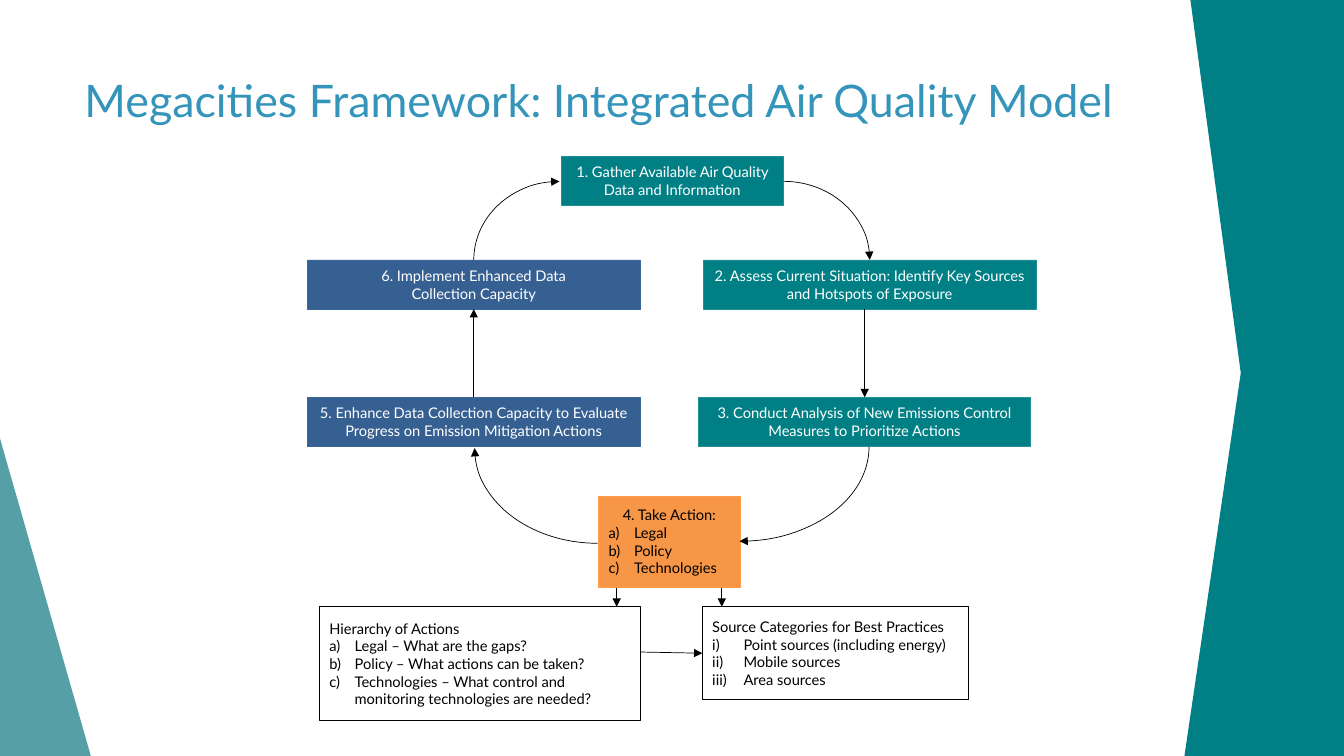
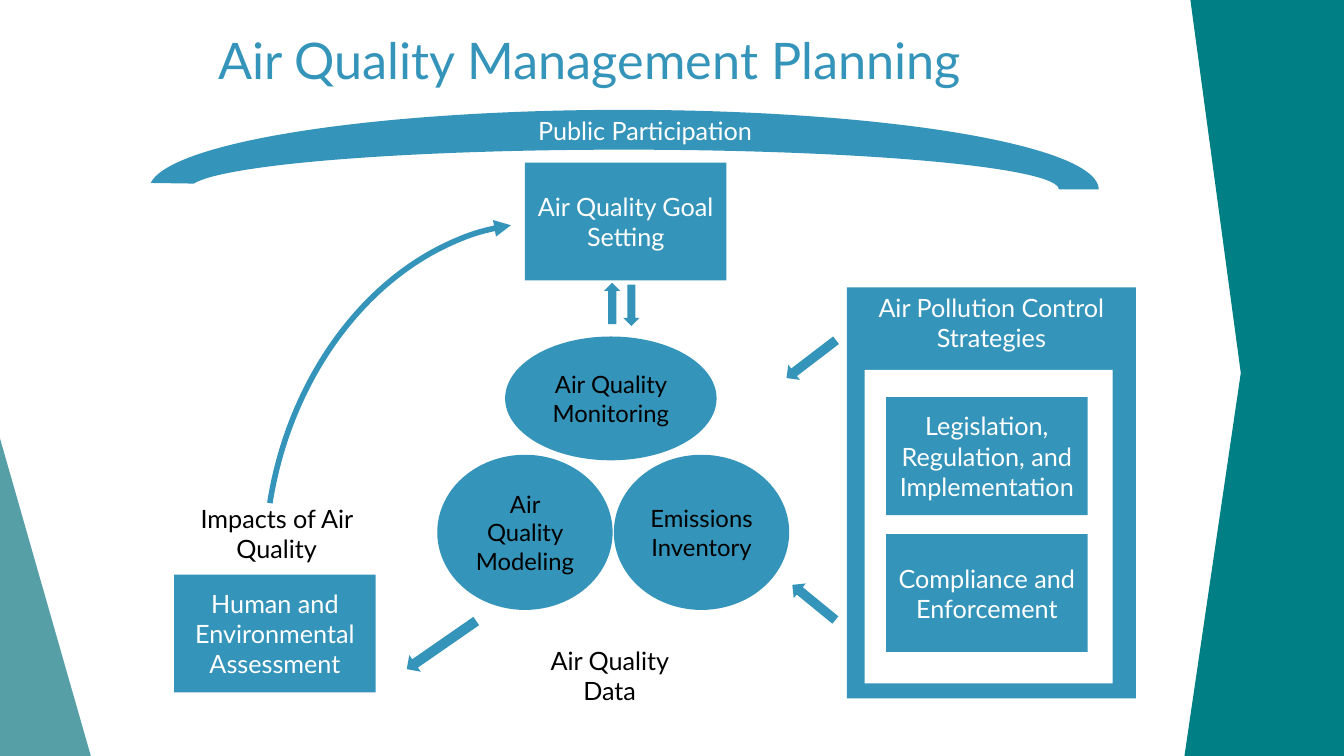
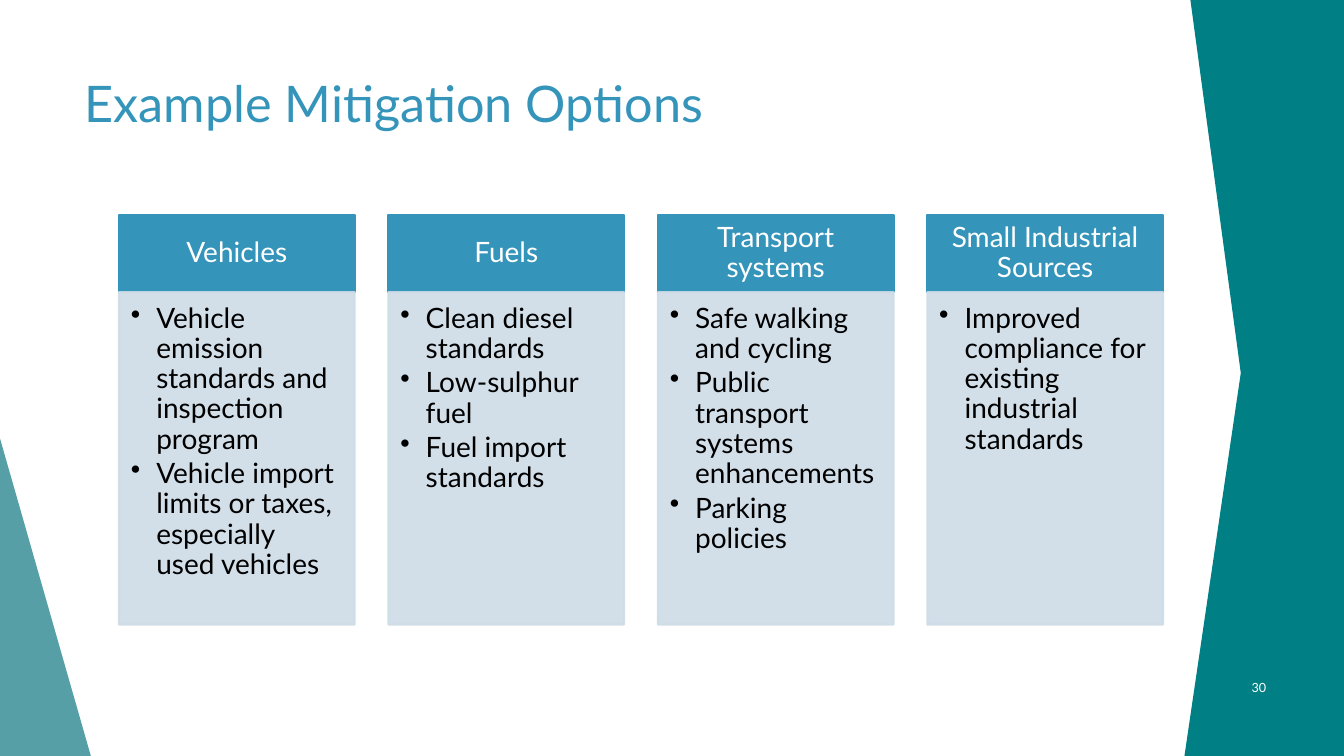
from lxml.etree import SubElement
from pptx import Presentation
from pptx.dml.color import RGBColor
from pptx.enum.shapes import MSO_CONNECTOR, MSO_SHAPE
from pptx.enum.text import MSO_ANCHOR, PP_ALIGN
from pptx.oxml.ns import qn
from pptx.util import Cm, Pt

BLUE = RGBColor(0x34, 0x94, 0xBA)
TEAL = RGBColor(0x00, 0x80, 0x85)
TEAL_EDGE = RGBColor(0x20, 0x90, 0x94)
SOFT_TEAL = RGBColor(0x3A, 0x8F, 0x98)
NAVY = RGBColor(0x37, 0x60, 0x92)
NAVY_EDGE = RGBColor(0x3B, 0x67, 0x9D)
ORANGE = RGBColor(0xF7, 0x96, 0x46)
ORANGE_EDGE = RGBColor(0xFF, 0x9D, 0x49)
PALE = RGBColor(0xCE, 0xDC, 0xE7)
WHITE = RGBColor(0xFF, 0xFF, 0xFF)
BLACK = RGBColor(0x00, 0x00, 0x00)

# Format values of text frames and paragraphs
MIDDLE = {"word_wrap": True, "vertical_anchor": MSO_ANCHOR.MIDDLE}
TOP = {"word_wrap": True, "vertical_anchor": MSO_ANCHOR.TOP}
UNWRAPPED = {"word_wrap": False, "vertical_anchor": MSO_ANCHOR.TOP}
CARD_HEAD = MIDDLE | {"margin_left": Cm(0.41), "margin_right": Cm(0.41),
                      "margin_top": Cm(0.23), "margin_bottom": Cm(0.23)}
CARD_BODY = TOP | {"margin_left": Cm(0.3), "margin_right": Cm(0.41),
                   "margin_top": Cm(0.3), "margin_bottom": Cm(0.43)}
CENTERED = {"alignment": PP_ALIGN.CENTER}
LEFT = {"alignment": PP_ALIGN.LEFT}
RIGHT = {"alignment": PP_ALIGN.RIGHT}

# List styles: element, its attributes, hanging indent
LETTERS = ("a:buAutoNum", {"type": "alphaLcParenR"}, Cm(0.64))
ROMAN = ("a:buAutoNum", {"type": "romanLcParenR"}, Cm(0.79))
DOTS = ("a:buChar", {"char": "•"}, Cm(0.64))


def draw(slide, kind, place, fill=None, line=None, weight=0.5, opacity=100):
    """Add a preset shape; place is left, top, width, height in cm."""
    shape = slide.shapes.add_shape(kind, *map(Cm, place))
    shape.shadow.inherit = False
    for paint, colour in ((shape.fill, fill), (shape.line.fill, line)):
        if colour is None:
            paint.background()
        else:
            paint.solid()
            paint.fore_color.rgb = colour
    if line is not None:
        shape.line.width = Pt(weight)
    if opacity < 100:
        for colour in shape.element.spPr.iter(qn("a:srgbClr")):
            SubElement(colour, qn("a:alpha"), val=str(opacity * 1000))
    return shape


def write(shape, lines, size, colour, frame_format=MIDDLE,
          paragraph_format=CENTERED, bullet=None, first_bullet=0):
    """Fill a shape with one paragraph per line, bulleted from first_bullet on."""
    frame = shape.text_frame
    for name, value in frame_format.items():
        setattr(frame, name, value)
    for index, text in enumerate(lines):
        paragraph = frame.add_paragraph() if index else frame.paragraphs[0]
        formats = paragraph_format
        if bullet and index >= first_bullet:
            tag, attributes, indent = bullet
            properties = paragraph._p.get_or_add_pPr()
            properties.set("marL", str(indent))
            properties.set("indent", str(-indent))
            SubElement(properties, qn(tag), attributes)
            formats = paragraph_format | LEFT
        for name, value in formats.items():
            setattr(paragraph, name, value)
        run = paragraph.add_run()
        run.text = text
        for name, value in {"name": "Lato", "size": Pt(size)}.items():
            setattr(run.font, name, value)
        run.font.color.rgb = colour


presentation = Presentation()
presentation.slide_width = Cm(33.87)
presentation.slide_height = Cm(19.05)

# Shared side bands and titles
TITLES = [
    ("Megacities Framework: Integrated Air Quality Model", 32, (1.88, 1.7, 30.28, 3.66)),
    ("Air Quality Management Planning", 36, (5.26, 0.61, 19.89, 1.96)),
    ("Example Mitigation Options", 36, (1.88, 1.7, 30.28, 3.66)),
]
BAND_OUTLINE = [(33.87, 19.05), (29.85, 19.05), (31.27, 9.4), (30, 0)]
slides = []
for title, size, place in TITLES:
    slide = presentation.slides.add_slide(presentation.slide_layouts[6])
    corner = draw(slide, MSO_SHAPE.ISOSCELES_TRIANGLE, (-0.05, 10.87, 2.34, 8.18),
                  SOFT_TEAL, opacity=85)
    corner.adjustments[0] = 0
    outline = slide.shapes.build_freeform(Cm(33.87), 0)
    outline.add_line_segments([(Cm(x), Cm(y)) for x, y in BAND_OUTLINE], close=True)
    band = outline.convert_to_shape()
    band.shadow.inherit = False
    band.fill.solid()
    band.fill.fore_color.rgb = TEAL
    band.line.fill.background()
    write(slide.shapes.add_textbox(*map(Cm, place)), [title], size, BLUE, TOP, LEFT)
    slides.append(slide)
framework, planning, options = slides
arrows = []

# Framework: the six steps
STEPS = [
    (["1. Gather Available Air Quality Data and Information"],
     (14.15, 3.94, 5.59, 1.24), TEAL, TEAL_EDGE),
    (["2. Assess Current Situation: Identify Key Sources and Hotspots of Exposure"],
     (17.73, 6.55, 8.38, 1.24), TEAL, TEAL_EDGE),
    (["3. Conduct Analysis of New Emissions Control Measures to Prioritize Actions"],
     (17.6, 10.01, 8.38, 1.24), TEAL, TEAL_EDGE),
    (["4. Take Action:", "Legal", "Policy", "Technologies"],
     (15.09, 12.5, 3.56, 2.29), ORANGE, ORANGE_EDGE),
    (["5. Enhance Data Collection Capacity to Evaluate Progress on Emission "
      "Mitigation Actions"],
     (7.75, 10.01, 8.38, 1.24), NAVY, NAVY_EDGE),
    (["6. Implement Enhanced Data", "Collection Capacity"],
     (7.75, 6.55, 8.38, 1.24), NAVY, NAVY_EDGE),
]
steps = []
for lines, place, fill, edge in STEPS:
    step = draw(framework, MSO_SHAPE.RECTANGLE, place, fill, edge)
    is_action = fill == ORANGE
    write(step, lines, 10.5, BLACK if is_action else WHITE,
          bullet=LETTERS if is_action else None, first_bullet=1)
    steps.append(step)
gather, assess, analyse, act, enhance, implement = steps

# Framework: details of the actions
hierarchy = draw(framework, MSO_SHAPE.RECTANGLE, (8.05, 15.29, 8.1, 2.87), WHITE, BLACK)
write(hierarchy, ["Hierarchy of Actions", "Legal – What are the gaps?",
                  "Policy – What actions can be taken?",
                  "Technologies – What control and monitoring technologies are needed?"],
      10.5, BLACK, MIDDLE, LEFT, LETTERS, 1)
categories = draw(framework, MSO_SHAPE.RECTANGLE, (17.7, 15.29, 6.71, 2.34), WHITE, BLACK)
write(categories, ["Source Categories for Best Practices",
                   "Point sources (including energy)", "Mobile sources", "Area sources"],
      10.5, BLACK, MIDDLE, LEFT, ROMAN, 1)

# Framework: straight arrows, joined where they meet the middle of a side
STRAIGHT = [
    ((18.19, 14.81, 18.19, 15.29), None, None),
    ((15.54, 14.81, 15.54, 15.29), None, None),
    ((16.15, 16.43, 17.7, 16.46), None, (categories, 1)),
    ((21.79, 7.79, 21.79, 10.01), None, (analyse, 0)),
    ((11.94, 10.01, 11.94, 7.79), (enhance, 0), (implement, 2)),
]
for ends, start, finish in STRAIGHT:
    arrow = framework.shapes.add_connector(MSO_CONNECTOR.STRAIGHT, *map(Cm, ends))
    if start:
        arrow.begin_connect(*start)
    if finish:
        arrow.end_connect(*finish)
    arrow.line.color.rgb = BLACK
    arrow.line.width = Pt(0.5)
    SubElement(arrow.element.spPr, qn("a:effectLst"))
    arrows.append(arrow)

# Framework: curved arrows
CURVES = [
    ((12.12, 4.39, 3.96, 4.32), 270),
    ((17.58, 4.57, 4.34, 3.96), 0),
    ((16.26, 8, 4.75, 6.53), 90),
    ((11.96, 8.89, 6.2, 4.8), 180),
]
for place, turn in CURVES:
    curve = draw(framework, MSO_SHAPE.ARC, place, line=BLACK)
    curve.rotation = turn
    arrows.append(curve)

# Planning: participation arch
arch = draw(planning, MSO_SHAPE.BLOCK_ARC, (3.76, 2.77, 23.93, 4.01), BLUE)
arch.adjustments[0] = 108.47
PLANNING_LABELS = [
    ("Public Participation", (13.31, 2.77, 6.12, 1.02), WHITE, UNWRAPPED, LEFT),
    ("Air Quality Data", (13.08, 16.13, 4.57, 1.27), BLACK, TOP, CENTERED),
    ("Impacts of Air Quality", (4.18, 12.56, 5.59, 2.06), BLACK, TOP, CENTERED),
]
for label, place, colour, frame_format, paragraph_format in PLANNING_LABELS:
    write(planning.shapes.add_textbox(*map(Cm, place)), [label], 18, colour,
          frame_format, paragraph_format)

# Planning: strategies panel
strategies = draw(planning, MSO_SHAPE.RECTANGLE, (21.34, 7.24, 7.29, 10.36), BLUE)
write(strategies, ["Air Pollution Control Strategies"], 18, WHITE, TOP)
draw(planning, MSO_SHAPE.RECTANGLE, (21.79, 9.32, 6.25, 7.9), WHITE)

# Planning: activities of equal size
ACTIVITIES = [
    ("Air Quality Goal Setting", 13.23, 4.1),
    ("Human and Environmental Assessment", 4.39, 14.48),
    ("Legislation, Regulation, and Implementation", 22.33, 10.01),
    ("Compliance and Enforcement", 22.33, 13.46),
]
for activity, left, top in ACTIVITIES:
    write(draw(planning, MSO_SHAPE.RECTANGLE, (left, top, 5.08, 2.97), BLUE),
          [activity], 18, WHITE)

# Planning: data sources
DATA_SOURCES = [
    ("Air Quality Monitoring", (12.73, 8.48, 5.33, 3.12)),
    ("Emissions Inventory", (15.47, 11.46, 4.42, 3.91)),
    ("Air Quality Modeling", (11.02, 11.46, 4.42, 3.91)),
]
for source, place in DATA_SOURCES:
    write(draw(planning, MSO_SHAPE.OVAL, place, BLUE), [source], 17, BLACK)

# Planning: flows
FLOWS = [
    ((10.06, 16, 2.13, 0.51), 145.3),
    ((19.81, 14.94, 1.4, 0.48), 219.3),
    ((19.66, 8.81, 1.57, 0.48), 142.6),
    ((15.39, 7.49, 1.04, 0.41), 90),
    ((14.91, 7.44, 1.04, 0.41), 270),
]
for place, turn in FLOWS:
    draw(planning, MSO_SHAPE.RIGHT_ARROW, place, BLUE).rotation = turn
feedback = draw(planning, MSO_SHAPE.ARC, (5.13, 7.19, 15.85, 12.6), line=BLUE, weight=4)
feedback.rotation = 281.4
feedback.adjustments[0] = 159.6
feedback.adjustments[1] = 208.38
arrows.append(feedback)

# Arrowheads of both diagrams
for arrow in arrows:
    SubElement(arrow.element.spPr.find(qn("a:ln")), qn("a:tailEnd"), type="triangle")

# Options: four cards
CARDS = [
    ("Vehicles", ["Vehicle emission standards and inspection program",
                  "Vehicle import limits or taxes, especially used vehicles"]),
    ("Fuels", ["Clean diesel standards", "Low-sulphur fuel", "Fuel import standards"]),
    ("Transport systems", ["Safe walking and cycling",
                           "Public transport systems enhancements",
                           "Parking policies"]),
    ("Small Industrial Sources",
     ["Improved compliance for existing industrial standards"]),
]
TIGHT = {"line_spacing": 0.9}
for column, (heading, measures) in enumerate(CARDS):
    left = 3 + column * 6.79
    head = draw(options, MSO_SHAPE.RECTANGLE, (left, 5.41, 5.94, 1.94), BLUE, BLUE, 1.5)
    write(head, [heading], 20, WHITE, CARD_HEAD, CENTERED | TIGHT)
    body = draw(options, MSO_SHAPE.RECTANGLE, (left, 7.36, 5.94, 8.38),
                PALE, PALE, 1.5, 90)
    write(body, measures, 20, BLACK, CARD_BODY,
          LEFT | TIGHT | {"space_after": Pt(3)}, DOTS)

# Options: page number
write(options.shapes.add_textbox(Cm(30.25), Cm(16.81), Cm(1.91), Cm(1.02)),
      ["30"], 9, WHITE, MIDDLE, RIGHT)

presentation.save("out.pptx")
